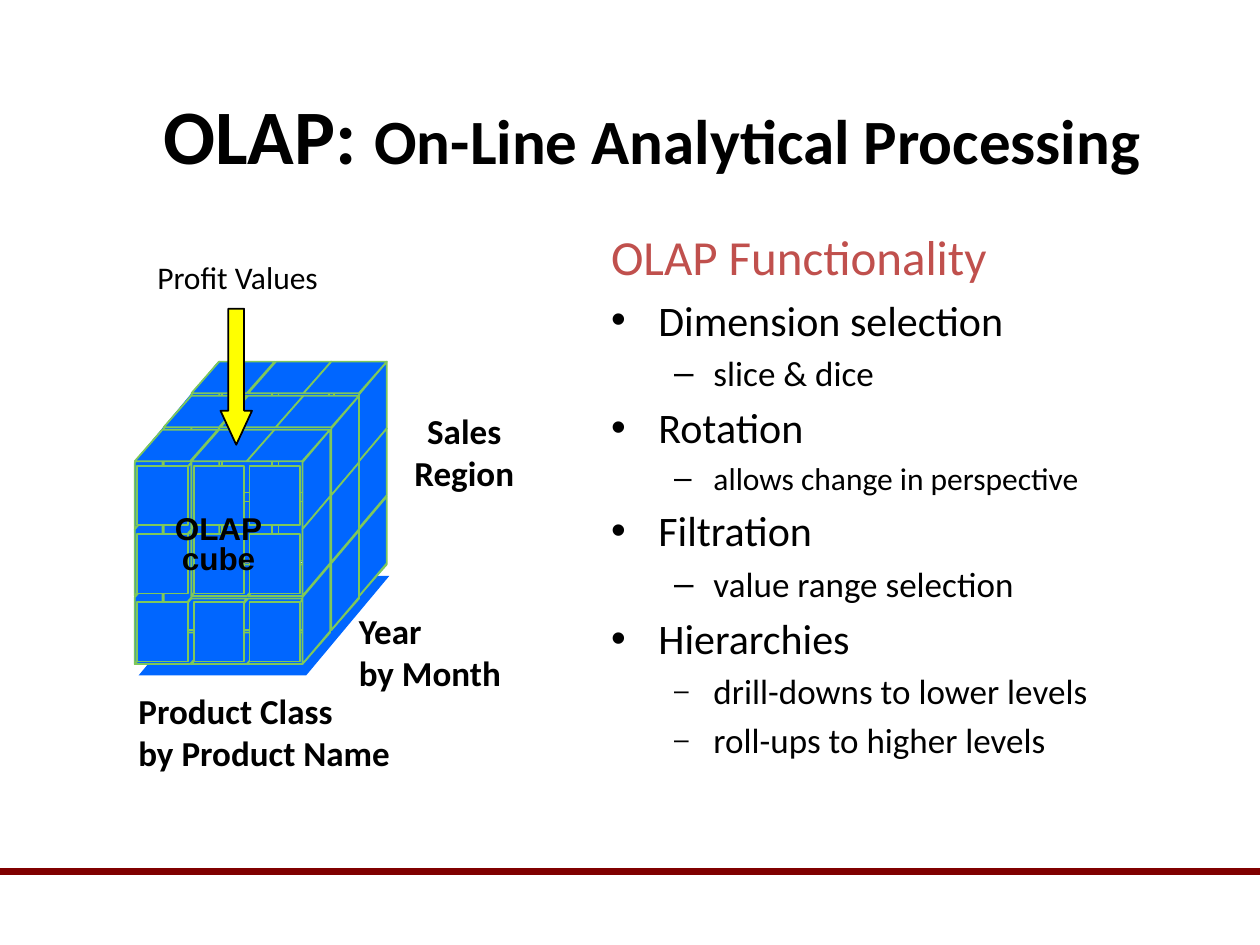
from lxml.etree import SubElement
from pptx import Presentation
from pptx.dml.color import RGBColor
from pptx.enum.shapes import MSO_CONNECTOR, MSO_SHAPE
from pptx.enum.text import MSO_ANCHOR, MSO_AUTO_SIZE, PP_ALIGN
from pptx.oxml.ns import qn
from pptx.util import Pt

PX = 9144
BLACK = RGBColor(0x00, 0x00, 0x00)
RED = RGBColor(0xC0, 0x50, 0x4D)
MAROON = RGBColor(0x80, 0x00, 0x00)
BLUE = RGBColor(0x00, 0x66, 0xFF)
GREEN = RGBColor(0x7E, 0xC8, 0x5B)
YELLOW = RGBColor(0xFF, 0xFF, 0x00)

DEPTH_X = (107, 130, 152)
DEPTH_Y = (341, 314, 287)
COLS = (0, 45, 89)
ROWS = (0, 54, 108)
SIDE_ROWS = (0, 107, 53)


class Deck:
    font = "Calibri"

    def __init__(self, width, height):
        self.prs = Presentation()
        self.prs.slide_width = width * PX
        self.prs.slide_height = height * PX
        self.s = self.prs.slides.add_slide(self.prs.slide_layouts[1])
        self.shapes = self.s.shapes

    def start_group(self):
        self.shapes = self.s.shapes.add_group_shape().shapes

    def place(self, sp, x, y, w, h):
        sp.left, sp.top, sp.width, sp.height = (v * PX for v in (x, y, w, h))

    def style(self, p, size, color=BLACK, bold=False, font=None):
        p.font.name = font or self.font
        p.font.bold = bold
        p.font.color.rgb = color
        if size:
            p.font.size = Pt(size)

    def paint(self, sp, fill, line):
        sp.shadow.inherit = False
        sp.fill.solid()
        sp.fill.fore_color.rgb = fill
        if line is None:
            sp.line.fill.background()
        else:
            sp.line.color.rgb = line
            sp.line.width = Pt(1)

    def title(self, box, runs):
        sp = self.s.shapes.title
        self.place(sp, *box)
        tf = sp.text_frame
        tf.auto_size = MSO_AUTO_SIZE.NONE
        tf.vertical_anchor = MSO_ANCHOR.MIDDLE
        p = tf.paragraphs[0]
        p.alignment = PP_ALIGN.CENTER
        for text, size in runs:
            r = p.add_run()
            r.text = text
            r.font.size = Pt(size)
        self.style(p, None, bold=True)

    def body(self, box, heading, items):
        sp = self.s.placeholders[1]
        self.place(sp, *box)
        tf = sp.text_frame
        tf.auto_size = MSO_AUTO_SIZE.NONE
        p = tf.paragraphs[0]
        p.text = heading
        SubElement(p._p.get_or_add_pPr(), qn("a:buNone"))
        p.space_before = Pt(0)
        self.style(p, 28, RED)
        for text, level, size, bullet_pct in items:
            p = tf.add_paragraph()
            p.text = text
            p.level = level
            if bullet_pct:
                bu = SubElement(p._p.get_or_add_pPr(), qn("a:buSzPct"))
                bu.set("val", str(bullet_pct * 1000))
            self.style(p, size)

    def text(self, box, text, size=20, bold=True, align=PP_ALIGN.LEFT,
             font=None, spacing=None, wrap=False):
        x, y, w, h = (v * PX for v in box)
        tf = self.shapes.add_textbox(x, y, w, h).text_frame
        tf.word_wrap = wrap
        tf.auto_size = MSO_AUTO_SIZE.SHAPE_TO_FIT_TEXT
        tf.text = text
        for p in tf.paragraphs:
            p.alignment = align
            p.line_spacing = spacing
            self.style(p, size, bold=bold, font=font)

    def shape(self, kind, x, y, w, h, fill=BLUE, line=GREEN):
        sp = self.shapes.add_shape(kind, x * PX, y * PX, w * PX, h * PX)
        self.paint(sp, fill, line)
        return sp

    def polygon(self, points, line=GREEN):
        fb = self.shapes.build_freeform(*points[0], scale=PX)
        fb.add_line_segments(points[1:], close=True)
        self.paint(fb.convert_to_shape(), BLUE, line)

    def rule(self, x1, y1, x2, y2, color, width):
        cn = self.shapes.add_connector(
            MSO_CONNECTOR.STRAIGHT, x1 * PX, y1 * PX, x2 * PX, y2 * PX)
        cn.line.color.rgb = color
        cn.line.width = Pt(width)
        SubElement(cn._element.spPr, qn("a:effectLst"))

    def front_faces(self, left, top):
        for dy in ROWS:
            for dx in COLS:
                self.shape(MSO_SHAPE.RECTANGLE, left + dx, top + dy, 40, 47)

    def side_faces(self, shift):
        for dy in SIDE_ROWS:
            for x, y in zip(DEPTH_X, DEPTH_Y):
                x, y = x + shift, y + dy
                self.polygon([(x, y + 26), (x, y + 79),
                              (x + 22, y + 53), (x + 22, y)])

    def flat_faces(self, shift):
        for x, y in zip(DEPTH_X, DEPTH_Y):
            for dx in COLS:
                left, top = x + dx, y + shift
                self.polygon([(left + 66, top), (left + 44, top + 25),
                              (left, top + 25), (left + 22, top)])

    def cube(self):
        self.shape(MSO_SHAPE.RECTANGLE, 174, 287, 133, 159, line=None)
        for points in (
            [(173, 287), (173, 446), (107, 525), (107, 366)],
            [(110, 536), (176, 457), (309, 457), (243, 536)],
            [(107, 526), (173, 447), (306, 447), (240, 526)],
        ):
            self.polygon(points, line=None)
        self.front_faces(176, 290)
        self.side_faces(0)
        self.flat_faces(161)
        self.side_faces(133)
        self.front_faces(109, 370)
        self.flat_faces(0)


def main():
    d = Deck(1000, 750)
    d.rule(0, 692, 1000, 692, MAROON, 4)
    d.title((92, 46, 851, 121),
            [("OLAP: ", 44), ("On-Line Analytical Processing", 36)])
    d.body((475, 175, 525, 467), "OLAP Functionality", [
        ("Dimension selection", 0, 24, None),
        ("slice & dice", 1, 20, None),
        ("Rotation", 0, 24, None),
        ("allows change in perspective", 1, 18, None),
        ("Filtration", 0, 24, None),
        ("value range selection", 1, 20, None),
        ("Hierarchies", 0, 24, None),
        ("drill-downs to lower levels", 1, 20, 75),
        ("roll-ups to higher levels", 1, 20, 75),
    ])
    d.start_group()
    d.cube()
    d.text((100, 405, 147, 75), "OLAP\ncube", 18, align=PP_ALIGN.CENTER,
           font="Arial", spacing=0.8, wrap=True)
    d.text((275, 479, 136, 76), "Year\nby Month")
    d.text((100, 542, 228, 76), "Product Class\nby Product Name")
    d.text((317, 320, 103, 76), "Sales\nRegion", align=PP_ALIGN.CENTER)
    d.text((115, 200, 197, 50), "Profit Values", 18, bold=False)
    arrow = d.shape(MSO_SHAPE.DOWN_ARROW, 175, 245, 25, 108, YELLOW, BLACK)
    arrow.adjustments[0] = 0.5
    arrow.adjustments[1] = 1.08
    d.prs.save("out.pptx")


if __name__ == "__main__":
    main()
